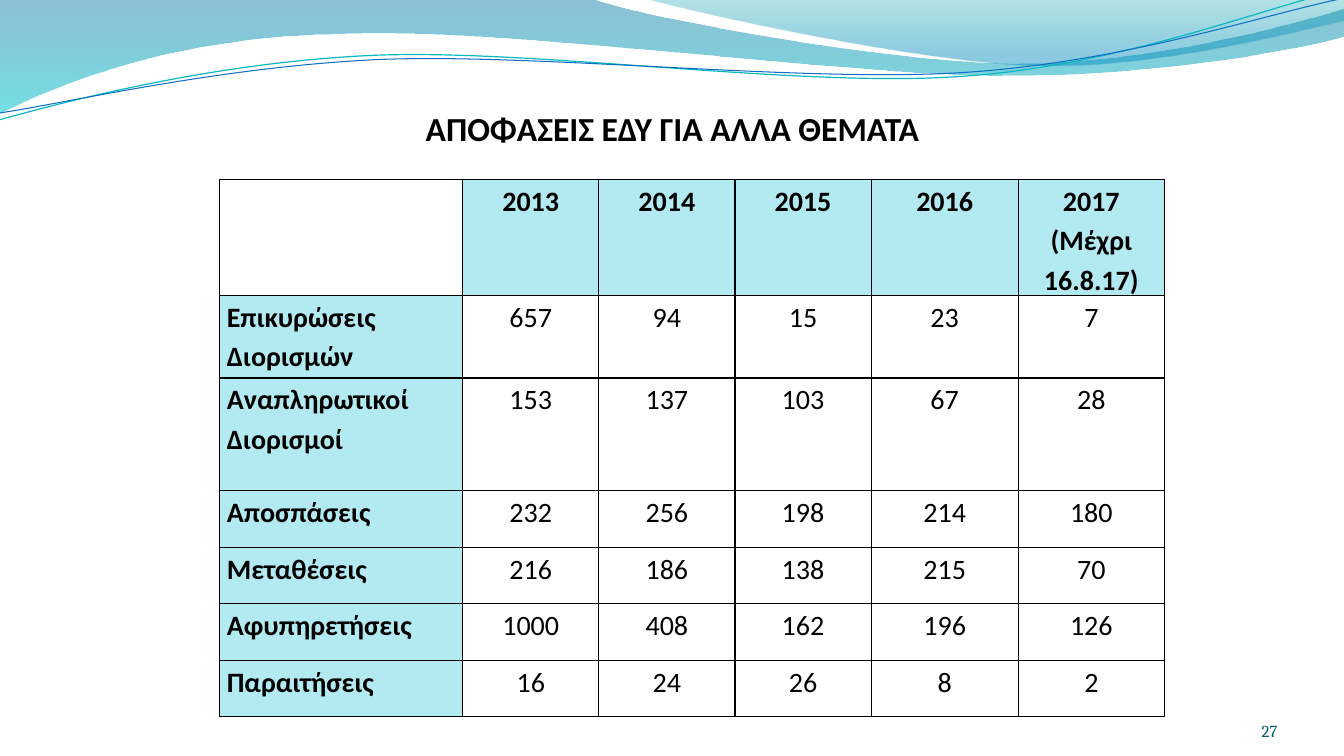
from math import cos, radians, sin

from lxml.etree import SubElement
from pptx import Presentation
from pptx.dml.color import RGBColor
from pptx.enum.text import MSO_ANCHOR, PP_ALIGN
from pptx.oxml.ns import qn
from pptx.util import Inches, Pt

COLORS = {
    "text": "000000", "border": "000000", "label": "B3EAF2", "number": "045D75",
    "deep": "0074A1", "aqua": "00C6CF", "teal": "00A1A9", "sky": "008BBF",
    "cyan line": "0AB8BF", "blue line": "0F6FC6",
}
TITLE = "ΑΠΟΦΑΣΕΙΣ ΕΔΥ ΓΙΑ ΑΛΛΑ ΘΕΜΑΤΑ"
PAGE_NUMBER = "27"
ROWS = [
    ("", "2013", "2014", "2015", "2016", "2017 (Μέχρι 16.8.17)"),
    ("Επικυρώσεις Διορισμών", "657", "94", "15", "23", "7"),
    ("Αναπληρωτικοί Διορισμοί", "153", "137", "103", "67", "28"),
    ("Αποσπάσεις", "232", "256", "198", "214", "180"),
    ("Μεταθέσεις", "216", "186", "138", "215", "70"),
    ("Αφυπηρετήσεις", "1000", "408", "162", "196", "126"),
    ("Παραιτήσεις", "16", "24", "26", "8", "2"),
]
TABLE_PLACE = (2.18, 1.78, 9.38, 5.32)
COLUMN_WIDTHS = [2.41, 1.35, 1.35, 1.35, 1.46, 1.45]
ROW_HEIGHTS = [0.56, 0.82, 1.12] + [0.56] * 4

BANDS = [
    ([(0, 0), (5.87, -0.01),
      (6.34, 0.17, 8.85, 0.63, 10.11, 0.63), (11.38, 0.63, 12.78, 0.26, 13.33, 0.09),
      (13.35, 0.36),
      (13.11, 0.44, 11.6, 0.76, 9.94, 0.75), (8.29, 0.75, 5.09, 0.28, 3.43, 0.34),
      (1.72, 0.36, 0.61, 0.83, -0.01, 1.13)],
     [(0, "deep", 45), (1, "aqua", 55)]),
    ([(6.39, -0.01),
      (6.79, 0.11, 9.09, 0.62, 10.25, 0.65), (11.41, 0.69, 12.82, 0.32, 13.33, 0.21),
      (13.33, 0)],
     [(0, "teal", 30), (0.8, "sky", 45)]),
]
WAVE_TILT = -2.7
WAVES = [
    ([(-0.01, 1.19),
      (0.64, 1.01, 2.11, 0.62, 3.69, 0.55), (5.27, 0.48, 7.9, 0.87, 9.5, 0.76),
      (11.1, 0.66, 12.52, 0.08, 13.31, -0.1)], (6.65, 0.57), "cyan line", 0.85),
    ([(0, 1.12),
      (0.63, 1.03, 2.18, 0.66, 3.78, 0.59), (5.37, 0.53, 7.96, 0.82, 9.55, 0.72),
      (11.15, 0.62, 12.55, 0.14, 13.34, -0.02)], (6.67, 0.59), "blue line", 0.75),
]


def color(name):
    return RGBColor.from_string(COLORS[name])


def apply(target, values):
    for name, value in values.items():
        setattr(target, name, value)


def turn(point, center, degrees):
    angle = radians(degrees)
    x, y = point[0] - center[0], point[1] - center[1]
    return (center[0] + x * cos(angle) - y * sin(angle),
            center[1] + x * sin(angle) + y * cos(angle))


def add_outline(shapes, segments, close, center=(0, 0), tilt=0):
    points = [turn(segment[i:i + 2], center, -tilt)
              for segment in segments for i in range(0, len(segment), 2)]
    points = [(Inches(x), Inches(y)) for x, y in points]
    builder = shapes.build_freeform(*points[0], scale=1.0)
    builder.add_line_segments(points[1:], close=close)
    shape = builder.convert_to_shape()
    shape.shadow.inherit = False
    shape.rotation = tilt
    steps = iter(list(shape._element.iter(qn("a:lnTo"))))
    for segment in segments[1:]:
        step = next(steps)
        if len(segment) == 6:
            curve = step.makeelement(qn("a:cubicBezTo"))
            step.addprevious(curve)
            for part in (step, next(steps), next(steps)):
                curve.append(part[0])
                part.getparent().remove(part)
    return shape


def add_band(page, segments, stops):
    band = add_outline(page.shapes, segments, True)
    band.line.fill.background()
    band.fill.gradient()
    band.fill.gradient_angle = 270
    for stop, (position, name, opacity) in zip(band.fill.gradient_stops, stops):
        stop.position = position
        stop.color.rgb = color(name)
    tints = list(band._element.spPr.iter(qn("a:srgbClr")))
    for tint, (position, name, opacity) in zip(tints, stops):
        SubElement(tint, qn("a:alpha"), val=str(opacity * 1000))


def add_wave(group, segments, center, name, width):
    wave = add_outline(group.shapes, segments, False, center, WAVE_TILT)
    wave.fill.background()
    wave.line.color.rgb = color(name)
    wave.line.width = Pt(width)


def write(frame, text, paragraph_format, font_format, ink="text"):
    para = frame.paragraphs[0]
    apply(para, paragraph_format)
    span = para.add_run()
    span.text = text
    apply(span.font, font_format)
    span.font.color.rgb = color(ink)


def add_text(page, place, text, top_margin, align, font_format, ink):
    box = page.shapes.add_textbox(*map(Inches, place))
    apply(box.text_frame, {
        "word_wrap": True, "vertical_anchor": MSO_ANCHOR.BOTTOM, "margin_left": 0,
        "margin_top": Inches(top_margin), "margin_right": 0, "margin_bottom": 0})
    write(box.text_frame, text, {"alignment": align}, font_format, ink)


def add_borders(cell):
    properties = cell._tc.get_or_add_tcPr()
    for side in ("lnL", "lnR", "lnT", "lnB"):
        edge = SubElement(properties, qn("a:" + side), w=str(Pt(1)))
        SubElement(SubElement(edge, qn("a:solidFill")), qn("a:srgbClr"), val=COLORS["border"])


def add_decisions(page):
    holder = page.shapes.add_table(
        len(ROWS), len(COLUMN_WIDTHS), *map(Inches, TABLE_PLACE))
    table = holder.table
    apply(table, {"first_row": False, "horz_banding": False})
    for column, width in zip(table.columns, COLUMN_WIDTHS):
        column.width = Inches(width)
    for row, height in zip(table.rows, ROW_HEIGHTS):
        row.height = Inches(height)
    holder.height = Inches(TABLE_PLACE[3])
    for r, values in enumerate(ROWS):
        for c, text in enumerate(values):
            cell = table.cell(r, c)
            apply(cell, {"margin_left": Inches(0.07), "margin_right": Inches(0.07),
                         "margin_top": 0, "margin_bottom": 0})
            add_borders(cell)
            is_label = bool(text) and (r == 0 or c == 0)
            if is_label:
                cell.fill.solid()
                cell.fill.fore_color.rgb = color("label")
            else:
                cell.fill.background()
            if text:
                write(cell.text_frame, text,
                      {"alignment": PP_ALIGN.CENTER if c else PP_ALIGN.LEFT,
                       "line_spacing": 1.15},
                      {"name": "Calibri", "size": Pt(20), "bold": is_label})


def main():
    deck = Presentation()
    apply(deck, {"slide_width": Inches(13.33), "slide_height": Inches(7.5)})
    page = deck.slides.add_slide(deck.slide_layouts[6])
    for band in BANDS:
        add_band(page, *band)
    group = page.shapes.add_group_shape()
    for wave in WAVES:
        add_wave(group, *wave)
    add_text(page, (2.17, 0.92, 9, 0.55), TITLE, 0.05, PP_ALIGN.CENTER,
             {"name": "Calibri", "size": Pt(24), "bold": True}, "text")
    add_decisions(page)
    add_text(page, (11.56, 6.95, 1.11, 0.4), PAGE_NUMBER, 0, PP_ALIGN.RIGHT,
             {"name": "Cambria", "size": Pt(12)}, "number")
    deck.save("out.pptx")


if __name__ == "__main__":
    main()
